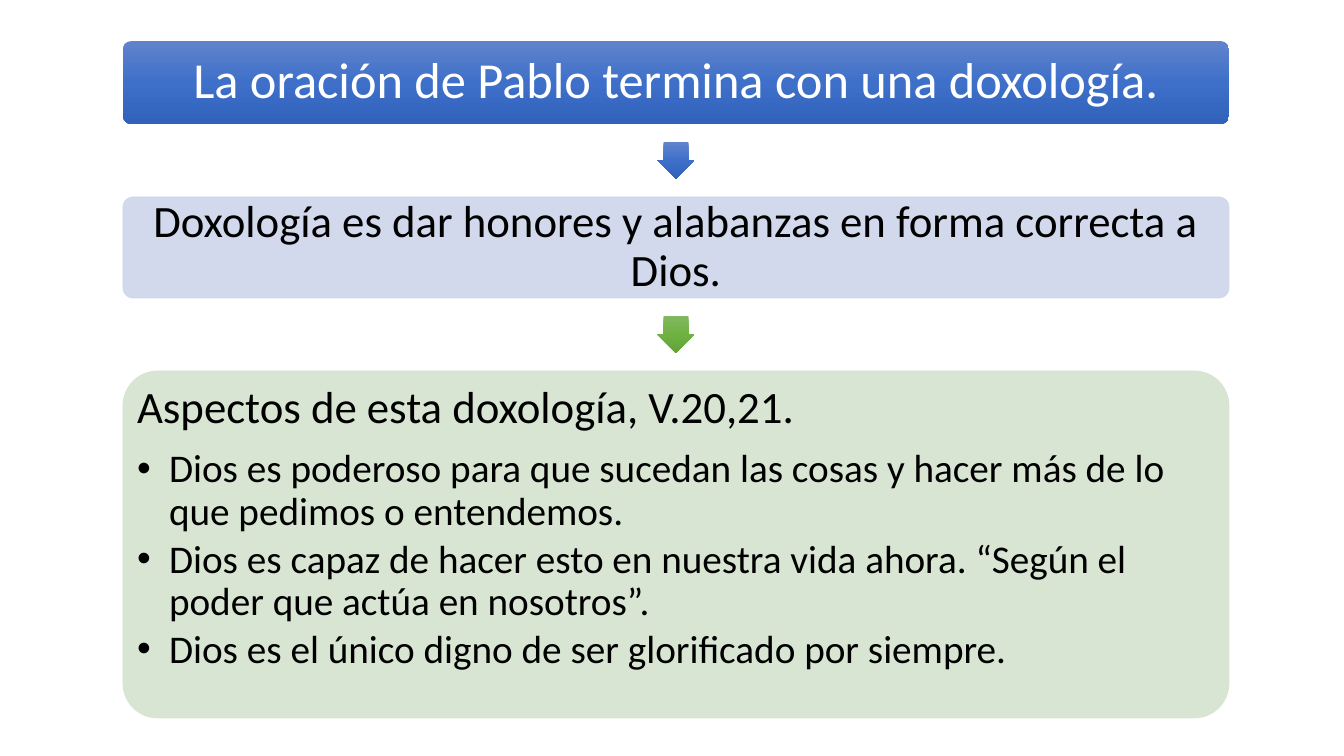
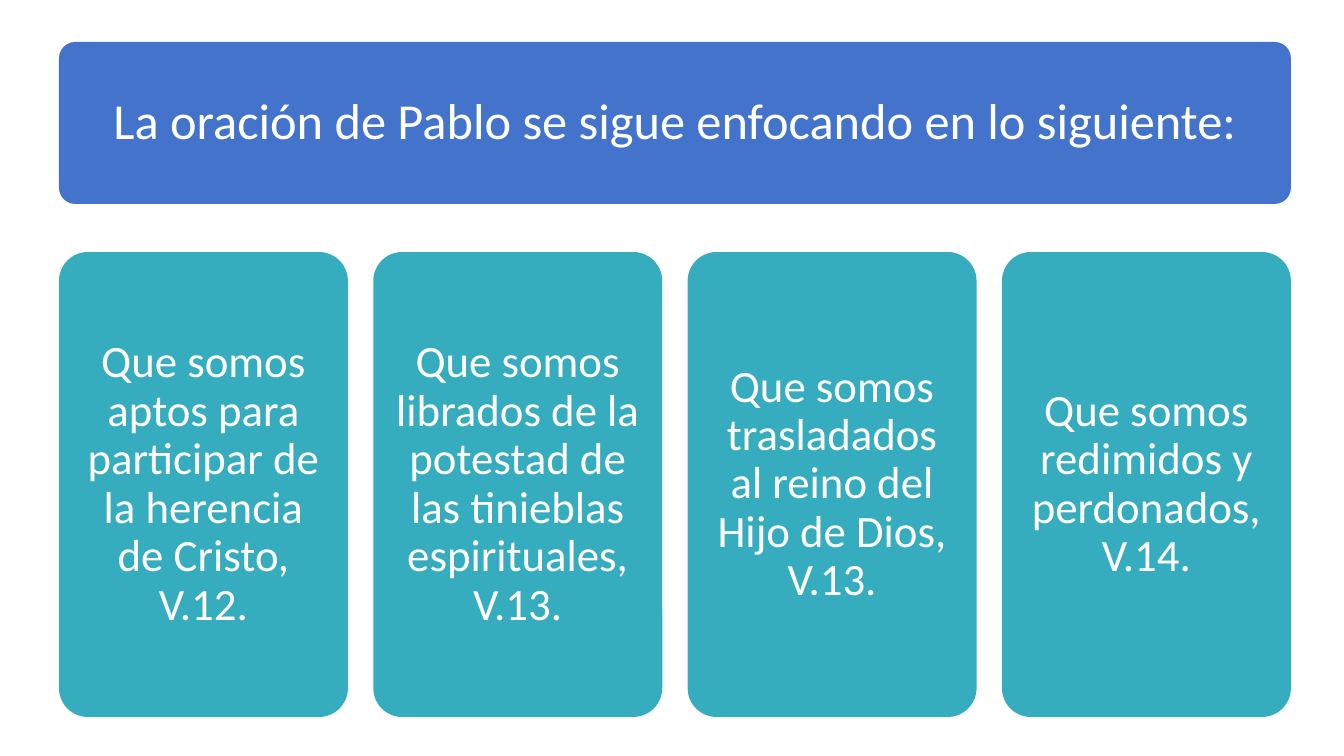
from lxml import etree
from pptx import Presentation
from pptx.dml.color import RGBColor
from pptx.enum.shapes import MSO_SHAPE
from pptx.enum.text import MSO_ANCHOR, MSO_AUTO_SIZE, PP_ALIGN
from pptx.oxml import parse_xml
from pptx.oxml.ns import nsdecls, qn
from pptx.util import Pt

ROUND, DOWN = MSO_SHAPE.ROUNDED_RECTANGLE, MSO_SHAPE.DOWN_ARROW
TOP, MIDDLE = MSO_ANCHOR.TOP, MSO_ANCHOR.MIDDLE
LEFT, CENTER = PP_ALIGN.LEFT, PP_ALIGN.CENTER
FIXED = MSO_AUTO_SIZE.NONE

SCALE = 914400 / 100.8
FONT = "Calibri"
ROUNDING = 0.1
COLORS = {
    "white": "FFFFFF", "black": "000000", "blue": "4373CA",
    "teal": "36ADBF", "lilac": "CFD5EA", "sage": "D5E3CF",
}
GRADS = {
    "blue": ("6183CB", "3E70CA", "3062BB"),
    "green": ("81B861", "6FB242", "62A336"),
}


def px(n):
    return round(n * SCALE)


def rgb(name):
    return RGBColor.from_string(COLORS[name])


# Fills
def set_grad(shape, name):
    stops = "".join(
        f'<a:gs pos="{i * 50000}"><a:srgbClr val="{c}"/></a:gs>'
        for i, c in enumerate(GRADS[name]))
    shape.element.spPr.insert(2, parse_xml(
        f'<a:gradFill {nsdecls("a")} rotWithShape="1"><a:gsLst>{stops}</a:gsLst>'
        '<a:lin ang="5400000" scaled="0"/></a:gradFill>'))


def set_tint(shape, name):
    """Fill and outline in one colour at 90% opacity."""
    shape.fill.solid()
    shape.fill.fore_color.rgb = rgb(name)
    shape.line.color.rgb = rgb(name)
    shape.line.width = Pt(0.5)
    for clr in shape.element.spPr.iter(qn("a:srgbClr")):
        etree.SubElement(clr, qn("a:alpha"), val="90000")


# Shapes
def add_shape(slide, kind, box):
    shape = slide.shapes.add_shape(kind, *map(px, box))
    shape.shadow.inherit = False
    shape.line.fill.background()
    return shape


def add_panel(slide, box):
    panel = add_shape(slide, ROUND, box)
    panel.adjustments[0] = ROUNDING
    return panel


def add_arrow(slide, box, grad):
    arrow = add_shape(slide, DOWN, box)
    arrow.adjustments[0] = 0.667
    arrow.adjustments[1] = 0.5
    set_grad(arrow, grad)


# Text
def set_frame(frame, pad, anchor=MIDDLE):
    frame.word_wrap = True
    frame.auto_size = FIXED
    frame.vertical_anchor = anchor
    frame.margin_left = frame.margin_right = px(pad)
    frame.margin_top = frame.margin_bottom = px(pad)


def set_para(para, text, size, color, align=CENTER, after=0):
    para.text = text
    para.alignment = align
    para.line_spacing = 0.9
    para.space_before = Pt(0)
    para.space_after = Pt(after)
    para.font.size = Pt(size)
    para.font.name = FONT
    para.font.color.rgb = rgb(color)


def set_text(shape, text, size, color, pad):
    set_frame(shape.text_frame, pad)
    set_para(shape.text_frame.paragraphs[0], text, size, color)


def set_bullet(para, indent):
    props = para._p.get_or_add_pPr()
    props.set("marL", str(px(indent)))
    props.set("indent", str(-px(indent)))
    if indent:
        etree.SubElement(props, qn("a:buChar"), char="•")
    else:
        etree.SubElement(props, qn("a:buNone"))


def place_holder(slide, holder, box):
    """Move a placeholder onto the panel in box, inside its round corners."""
    x, y, w, h = box
    edge = 0.29 * ROUNDING * min(w, h)
    holder.left, holder.top = px(x + edge), px(y + edge)
    holder.width, holder.height = px(w - 2 * edge), px(h - 2 * edge)
    slide.shapes.element.append(holder.element)


# Regions
def add_title(slide, box, text, pad):
    band = add_panel(slide, box)
    place_holder(slide, slide.shapes.title, box)
    set_text(slide.shapes.title, text, 36, "white", pad)
    return band


def add_list(slide, box, head, items):
    set_tint(add_panel(slide, box), "sage")
    body = slide.placeholders[1]
    place_holder(slide, body, box)
    frame = body.text_frame
    set_frame(frame, 4, TOP)
    para = frame.paragraphs[0]
    set_bullet(para, 0)
    set_para(para, head, 32, "black", LEFT, 11)
    for item in items:
        para = frame.add_paragraph()
        set_bullet(para, 32)
        set_para(para, item, 28, "black", LEFT, 4)


def add_cards(slide, box, texts):
    x, y, w, h = box
    wide = 289
    gap = (w - len(texts) * wide) / (len(texts) - 1)
    for i, text in enumerate(texts):
        card = add_panel(slide, (x + i * (wide + gap), y, wide, h))
        card.fill.solid()
        card.fill.fore_color.rgb = rgb("teal")
        set_text(card, text, 32, "white", 13)


# Slides
def build_flow(deck, box, title, note, head, items):
    slide = deck.slides.add_slide(deck.slide_layouts[1])
    x, y, w, h = box
    side, gap = 37, 18
    step = side + 2 * gap
    mid = x + (w - side) / 2
    band, strip = 83, 101

    set_grad(add_title(slide, (x, y, w, band), title, 5), "blue")
    add_arrow(slide, (mid, y + band + gap, side, side), "blue")

    top = y + band + step
    panel = add_panel(slide, (x, top, w, strip))
    set_tint(panel, "lilac")
    set_text(panel, note, 32, "black", 4)
    add_arrow(slide, (mid, top + strip + gap, side, side), "green")

    top += strip + step
    add_list(slide, (x, top, w, y + h - top), head, items)


def build_cards(deck, box, title, texts):
    slide = deck.slides.add_slide(deck.slide_layouts[5])
    x, y, w, h = box
    band, gap = 162, 48
    fill = add_title(slide, (x, y, w, band), title, 15).fill
    fill.solid()
    fill.fore_color.rgb = rgb("blue")
    top = y + band + gap
    add_cards(slide, (x, top, w, y + h - top), texts)


def main():
    deck = Presentation()
    deck.slide_width, deck.slide_height = px(1344), px(756)
    build_flow(
        deck, (123, 41, 1106, 677),
        "La oración de Pablo termina con una doxología.",
        "Doxología es dar honores y alabanzas en forma correcta a Dios.",
        "Aspectos de esta doxología, V.20,21.",
        ["Dios es poderoso para que sucedan las cosas y hacer más de lo que "
         "pedimos o entendemos.",
         "Dios es capaz de hacer esto en nuestra vida ahora. “Según el poder "
         "que actúa en nosotros”.",
         "Dios es el único digno de ser glorificado por siempre."])
    build_cards(
        deck, (59, 42, 1232, 675),
        "La oración de Pablo se sigue enfocando en lo siguiente:",
        ["Que somos aptos para participar de la herencia de Cristo, V.12.",
         "Que somos librados de la potestad de las tinieblas espirituales, V.13.",
         "Que somos trasladados al reino del Hijo de Dios, V.13.",
         "Que somos redimidos y perdonados, V.14."])
    deck.save("out.pptx")


if __name__ == "__main__":
    main()
